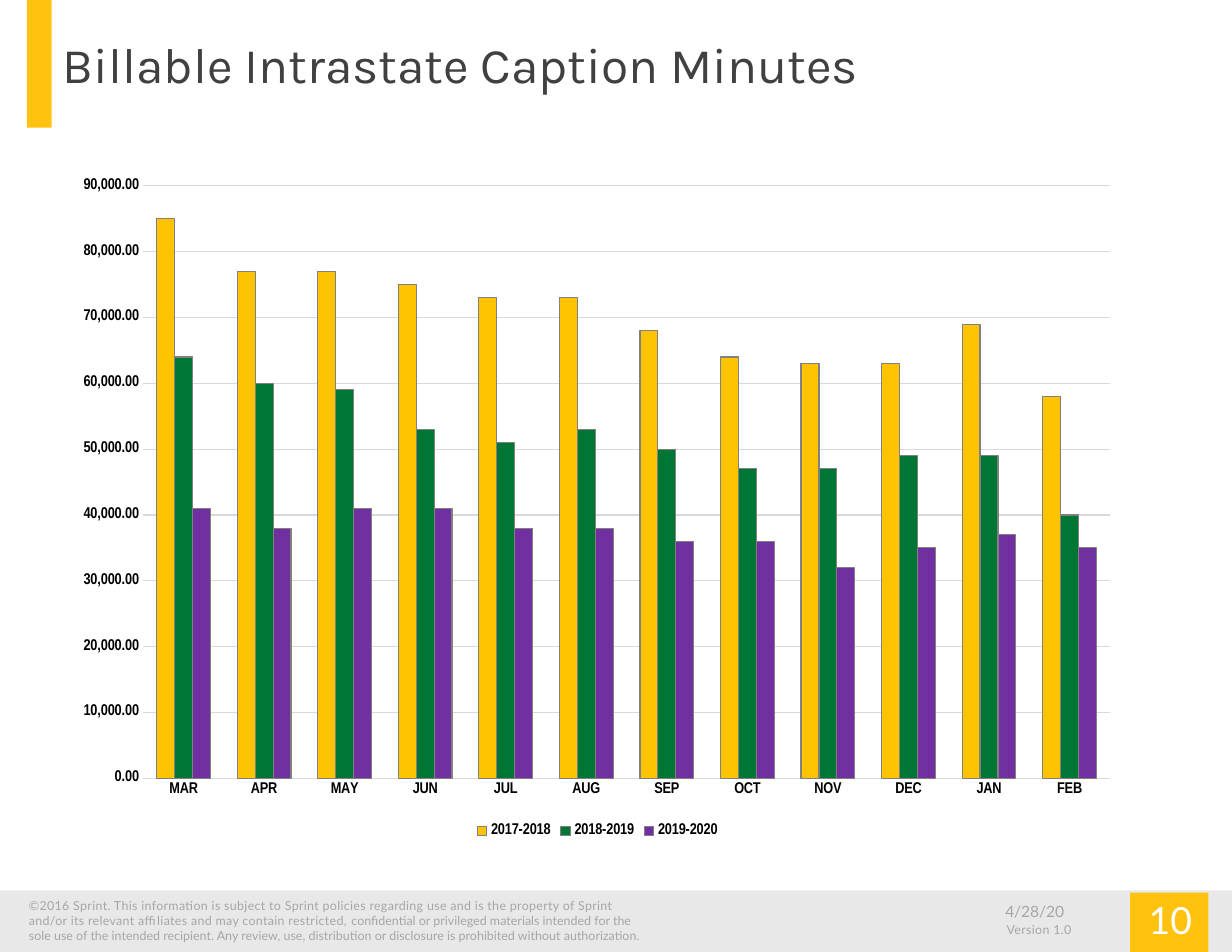
"""Build the slide of billable intrastate captioned telephone minutes."""
from lxml.etree import SubElement
from pptx import Presentation
from pptx.chart.data import CategoryChartData
from pptx.dml.color import RGBColor
from pptx.enum.chart import XL_CHART_TYPE, XL_LEGEND_POSITION, XL_TICK_MARK
from pptx.enum.shapes import MSO_SHAPE
from pptx.enum.text import MSO_ANCHOR, PP_ALIGN
from pptx.oxml.ns import qn
from pptx.util import Inches, Pt

YELLOW = RGBColor(0xFF, 0xC2, 0x0E)
PALE = RGBColor(0xE8, 0xE8, 0xE8)
MUTED = RGBColor(0xA6, 0xA6, 0xA6)
DARK = RGBColor(0x40, 0x40, 0x40)
WHITE = RGBColor(0xFF, 0xFF, 0xFF)
BLACK = RGBColor(0, 0, 0)
GRID = RGBColor(0xD9, 0xD9, 0xD9)
OUTLINE = RGBColor(0x80, 0x80, 0x80)
GOLD = RGBColor(0xFF, 0xC3, 0x01)
GREEN = RGBColor(0x00, 0x76, 0x35)
PURPLE = RGBColor(0x70, 0x30, 0xA0)

prs = Presentation()
prs.slide_width, prs.slide_height = Inches(11), Inches(8.5)
s = prs.slides.add_slide(prs.slide_layouts[6])


def add_text(*texts, box, size=8, color=MUTED, font="Lato", align=PP_ALIGN.LEFT,
             anchor=MSO_ANCHOR.TOP, inset=(0.1, 0.05), spacing=(0,)):
    tf = s.shapes.add_textbox(*map(Inches, box)).text_frame
    tf.word_wrap = True
    tf.vertical_anchor = anchor
    tf.margin_left = tf.margin_right = Inches(inset[0])
    tf.margin_top = tf.margin_bottom = Inches(inset[1])
    p = tf.paragraphs[0]
    p.alignment = align
    for text, gap in zip(texts, spacing):
        r = p.add_run()
        r.text = text
        r.font.size, r.font.name = Pt(size), font
        r.font.color.rgb = color
        r.font._element.set("spc", str(gap))


for box, color in [
    ((0.24, 0, 0.22, 1.14), YELLOW),
    ((0, 7.95, 11, 0.55), PALE),
    ((10.09, 7.97, 0.7, 0.53), YELLOW),
]:
    sp = s.shapes.add_shape(MSO_SHAPE.RECTANGLE, *map(Inches, box))
    sp.shadow.inherit = False
    sp.fill.solid()
    sp.fill.fore_color.rgb = color
    sp.line.fill.background()

add_text("©2016 Sprint. This information is subject to Sprint policies regarding use "
         "and is the property of Sprint and/or its relevant affiliates and may contain "
         "restricted, ",
         "confidential or privileged materials intended for the sole use of "
         "the intended recipient. Any review, use, distribution or disclosure is "
         "prohibited without authorization.",
         box=(0.16, 7.97, 5.75, 0.64), spacing=(20, 0))
add_text("10", box=(9.76, 7.97, 1.38, 0.48), size=24, color=WHITE,
         align=PP_ALIGN.CENTER, inset=(0.08, 0.04))
add_text("4/28/20", box=(7.85, 8, 1.75, 0.27), size=10, align=PP_ALIGN.RIGHT)
add_text("Version 1.0", box=(8.89, 8.18, 1.36, 0.24), spacing=(20,))
add_text("Billable Intrastate Caption Minutes", box=(0.56, 0.11, 9.34, 0.92), size=32,
         color=DARK, font="Karla", anchor=MSO_ANCHOR.MIDDLE, inset=(0, 0))

years = [
    ("2017-2018", GOLD, [85, 77, 77, 75, 73, 73, 68, 64, 63, 63, 69, 58]),
    ("2018-2019", GREEN, [64, 60, 59, 53, 51, 53, 50, 47, 47, 49, 49, 40]),
    ("2019-2020", PURPLE, [41, 38, 41, 41, 38, 38, 36, 36, 32, 35, 37, 35]),
]
data = CategoryChartData(number_format="#,##0.00")
data.categories = "MAR APR MAY JUN JUL AUG SEP OCT NOV DEC JAN FEB".split()
for name, _, thousands in years:
    data.add_series(name, [v * 1000 for v in thousands])
width, height = Inches(9.55), Inches(6.04)
chart = s.shapes.add_chart(XL_CHART_TYPE.COLUMN_CLUSTERED, Inches(0.56), Inches(1.48),
                           width, height, data).chart
chart.has_title = False
chart.font.name, chart.font.size = "Lato", Pt(10)
chart.font.color.rgb = BLACK
chart.has_legend = True
chart.legend.position = XL_LEGEND_POSITION.BOTTOM
chart.legend.include_in_layout = False

plot = chart.plots[0]
plot.gap_width, plot.overlap = 150, 0
plot.vary_by_categories = False
for series, (_, color, _) in zip(plot.series, years):
    series.format.fill.solid()
    series.format.fill.fore_color.rgb = color
    series.format.line.color.rgb = OUTLINE
    series.format.line.width = Pt(0.75)

cat, val = chart.category_axis, chart.value_axis
for axis in (cat, val):
    axis.major_tick_mark = axis.minor_tick_mark = XL_TICK_MARK.NONE
    axis.format.line.fill.background()
for font in (cat.tick_labels.font, val.tick_labels.font, chart.legend.font):
    font.name, font.size, font.bold = "Arial Narrow", Pt(10), True
    font.color.rgb = BLACK
val.minimum_scale, val.maximum_scale, val.major_unit = 0, 90000, 10000
val.tick_labels.number_format = "#,##0.00"
val.tick_labels.number_format_is_linked = False
val.major_gridlines.format.line.color.rgb = GRID
val.major_gridlines.format.line.width = Pt(0.75)

area = chart._chartSpace.chart.plotArea
for old in area.findall(qn("c:layout")):
    area.remove(old)
layout = SubElement(area, qn("c:layout"))
area.insert(0, layout)
manual = SubElement(layout, qn("c:manualLayout"))
for tag, value in [("layoutTarget", "inner"), ("xMode", "edge"), ("yMode", "edge"),
                   ("x", Inches(0.72) / width), ("y", Inches(0.18) / height),
                   ("w", Inches(8.63) / width), ("h", Inches(5.29) / height)]:
    SubElement(manual, qn(f"c:{tag}")).set("val", str(value))

prs.save("out.pptx")
